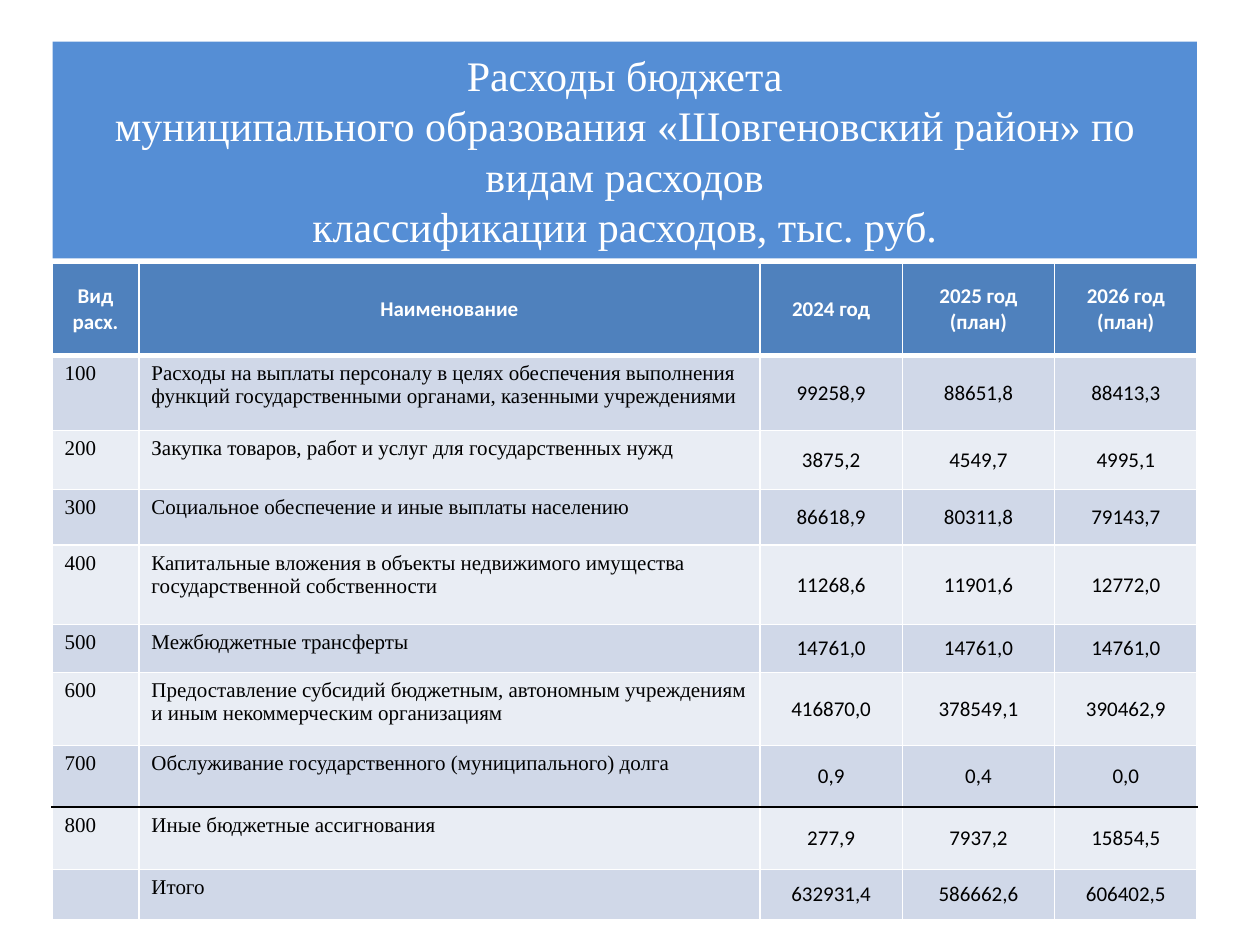
from lxml import etree
from pptx import Presentation
from pptx.dml.color import RGBColor
from pptx.enum.text import MSO_ANCHOR, MSO_AUTO_SIZE, PP_ALIGN
from pptx.oxml.ns import qn
from pptx.util import Cm, Pt

CENTER, LEFT = PP_ALIGN.CENTER, PP_ALIGN.LEFT
MIDDLE, TOP = MSO_ANCHOR.MIDDLE, MSO_ANCHOR.TOP
GROW = MSO_AUTO_SIZE.SHAPE_TO_FIT_TEXT
SERIF, SANS = "Times New Roman", "Calibri"
WHITE, BLACK = "FFFFFF", "000000"


def format_run(run, color, **values):
    for key, value in values.items():
        setattr(run.font, key, value)
    run.font.color.rgb = RGBColor.from_string(color)


def add_border(cell, side, color, width):
    line = etree.SubElement(cell._tc.get_or_add_tcPr(), qn(f"a:{side}"), w=str(Pt(width)))
    fill = etree.SubElement(line, qn("a:solidFill"))
    etree.SubElement(fill, qn("a:srgbClr"), val=color)


expenses = [
    ("Вид расх.", "Наименование", "2024 год", "2025 год\n(план)", "2026 год (план)"),
    ("100", "Расходы на выплаты персоналу в целях обеспечения выполнения функций "
     "государственными органами, казенными учреждениями", "99258,9", "88651,8", "88413,3"),
    ("200", "Закупка товаров, работ и услуг для государственных нужд",
     "3875,2", "4549,7", "4995,1"),
    ("300", "Социальное обеспечение и иные выплаты населению",
     "86618,9", "80311,8", "79143,7"),
    ("400", "Капитальные вложения в объекты недвижимого имущества "
     "государственной собственности", "11268,6", "11901,6", "12772,0"),
    ("500", "Межбюджетные трансферты", "14761,0", "14761,0", "14761,0"),
    ("600", "Предоставление субсидий бюджетным, автономным учреждениям "
     "и иным некоммерческим организациям", "416870,0", "378549,1", "390462,9"),
    ("700", "Обслуживание государственного (муниципального) долга", "0,9", "0,4", "0,0"),
    ("800", "Иные бюджетные ассигнования", "277,9", "7937,2", "15854,5"),
    ("", "Итого", "632931,4", "586662,6", "606402,5"),
]
column_widths = [1.75, 12.52, 2.87, 3.07, 2.87]
row_heights = [1.85, 1.52, 1.19, 1.12, 1.6, 0.97, 1.47, 1.24, 1.26, 0.81]
row_edges = {1: (WHITE, 3), 8: (BLACK, 1)}

deck = Presentation()
deck.slide_width, deck.slide_height = Cm(25.4), Cm(19.05)
slide = deck.slides.add_slide(deck.slide_layouts[5])

heading = slide.shapes.title
heading.left, heading.top, heading.width, heading.height = Cm(1.06), Cm(0.84), Cm(23.07), Cm(4.37)
heading.fill.solid()
heading.fill.fore_color.rgb = RGBColor.from_string("558ED5")
heading.text_frame.text = (
    "Расходы бюджета\vмуниципального образования «Шовгеновский район» по видам расходов"
    "\vклассификации расходов, тыс. руб."
)
heading.text_frame.auto_size = GROW
heading.text_frame.paragraphs[0].alignment = CENTER
for run in heading.text_frame.paragraphs[0].runs:
    format_run(run, WHITE, name=SERIF, size=Pt(24))

budget = slide.shapes.add_table(
    len(expenses), len(column_widths), Cm(1.05), Cm(5.31),
    Cm(sum(column_widths)), Cm(sum(row_heights)),
).table
for column, width in zip(budget.columns, column_widths):
    column.width = Cm(width)

for r, (entries, height) in enumerate(zip(expenses, row_heights)):
    budget.rows[r].height = Cm(height)
    is_header = r == 0
    row_fill = "4F81BD" if is_header else "D0D8E8" if r % 2 else "E9EDF4"
    for c, entry in enumerate(entries):
        cell = budget.cell(r, c)
        is_label = not is_header and c < 2
        cell.vertical_anchor = TOP if is_label else MIDDLE
        add_border(cell, "lnL", WHITE, 1)
        add_border(cell, "lnR", WHITE, 1)
        add_border(cell, "lnT", *row_edges.get(r, (WHITE, 1)))
        add_border(cell, "lnB", *row_edges.get(r + 1, (WHITE, 1)))
        cell.fill.solid()
        cell.fill.fore_color.rgb = RGBColor.from_string(row_fill)
        cell.text = entry
        for paragraph in cell.text_frame.paragraphs:
            paragraph.alignment = LEFT if is_label else CENTER
            for run in paragraph.runs or [paragraph.add_run()]:
                format_run(run, WHITE if is_header else BLACK, size=Pt(12),
                           name=SERIF if is_label else SANS, bold=is_header)

deck.save("out.pptx")
